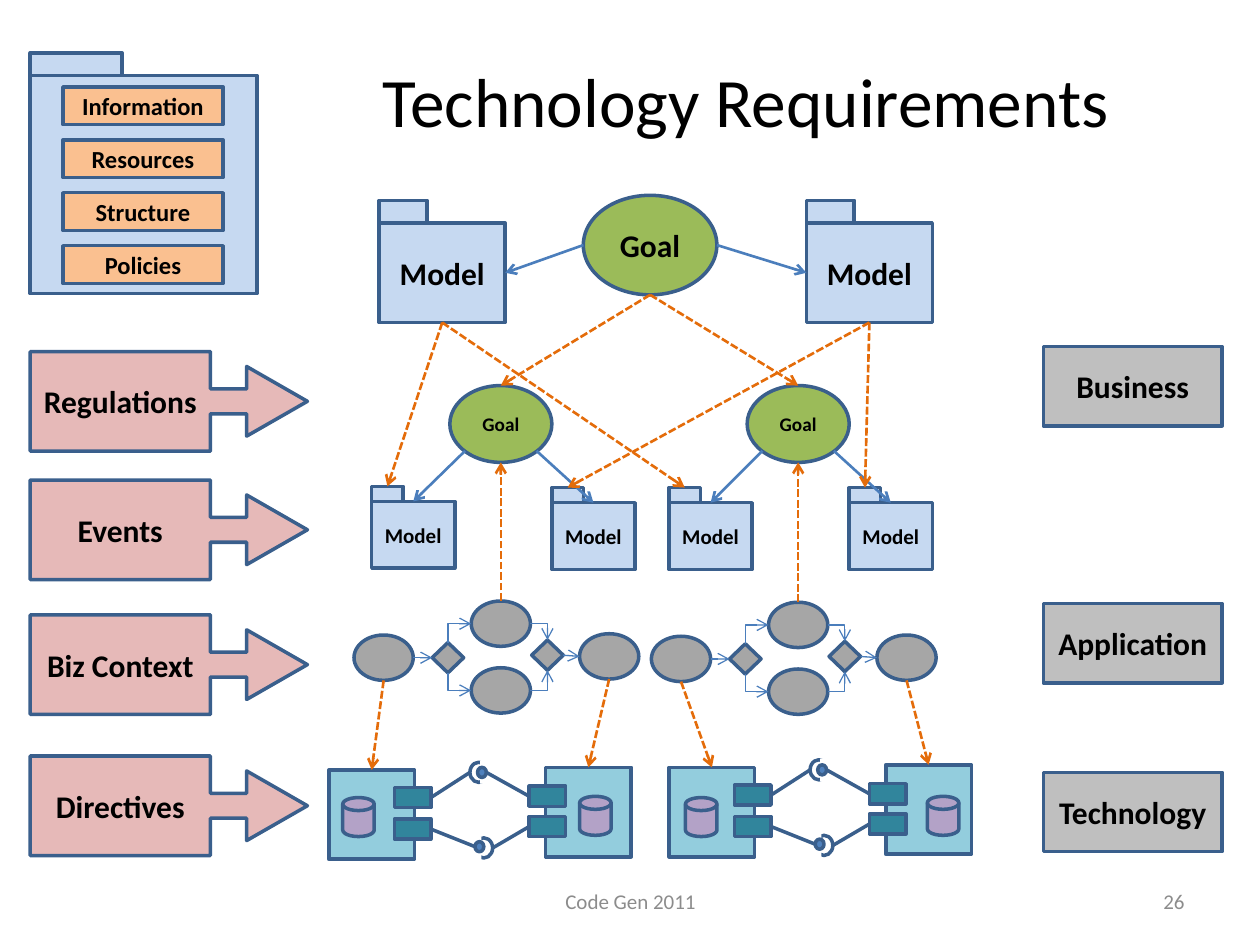
from lxml import etree
from pptx import Presentation
from pptx import util as u
from pptx.dml.color import RGBColor
from pptx.enum import dml, shapes, text
from pptx.oxml.ns import qn

THEME = {
    "font": "Calibri", "ink": "000000", "muted": "8C8C8C", "outline": "3A5F8C",
    "folder": "C6D9F1", "item": "FAC090", "goal": "9BBB59", "input": "E6B9B8",
    "layer": "BFBFBF", "step": "A6A6A6", "component": "93CDDD", "port": "31859C",
    "store": "B3A2C7", "ball": "4F81BD", "paper": "FFFFFF",
    "title": 39.6, "large": 18, "medium": 14, "model": 12, "small": 11, "footer": 12,
}
LINES = {
    "solid": {"color": "4B7EBC", "width": 1.5, "arrow": True},
    "trace": {"color": "E46C0A", "width": 1.5, "arrow": True, "dash": dml.MSO_LINE.SQUARE_DOT},
    "flow": {"color": "4B7EBC", "width": 0.75, "arrow": True},
    "wire": {"color": THEME["outline"], "width": 2, "arrow": False},
}
SITES = {"top": (0.5, 0), "left": (0, 0.5), "bottom": (0.5, 1), "right": (1, 0.5),
         "lower left": (0.15, 0.85), "lower right": (0.85, 0.85)}
JOINS = ["top", "left", "bottom", "right"]
KIND = shapes.MSO_SHAPE
ALIGN = text.PP_ALIGN

CAPTIONS = [
    ("Technology Requirements", (2.61, 0.17, 6.29, 1.25), "title", "ink", ALIGN.RIGHT),
    ("26", (7.17, 6.95, 2.33, 0.4), "footer", "muted", ALIGN.RIGHT),
    ("Code Gen 2011", (3.42, 6.95, 3.17, 0.4), "footer", "muted", ALIGN.CENTER),
]
INPUTS = [("Regulations", 2.79), ("Events", 3.81), ("Biz Context", 4.88), ("Directives", 6)]
ITEMS = ["Information", "Resources", "Structure", "Policies"]
LAYERS = [("Business", 2.75), ("Application", 4.79), ("Technology", 6.13)]
TOP_MODELS = [3.01, 6.4]
SUB_GOALS = [3.57, 5.93]
SUB_MODELS = [(2.95, 3.86), (4.38, 3.87), (5.31, 3.87), (6.74, 3.87)]
STORES = [(2.72, 6.33), (4.6, 6.32), (5.44, 6.33), (7.36, 6.32)]

STEP, GATE = (0.47, 0.36), (0.25, 0.24)
FLOW_OFFSETS = [(0, 0), (2.36, 0.01)]
FLOW = {
    "start": (KIND.OVAL, 2.81, 5.04, STEP),
    "split": (KIND.FLOWCHART_DECISION, 3.43, 5.1, GATE),
    "lower": (KIND.OVAL, 3.74, 5.3, STEP),
    "upper": (KIND.OVAL, 3.74, 4.77, STEP),
    "finish": (KIND.OVAL, 4.6, 5.03, STEP),
    "merge": (KIND.FLOWCHART_DECISION, 4.22, 5.08, GATE),
}
FLOW_LINKS = [
    ("start", "right", "split", "left", {}),
    ("upper", "left", "split", "top", {"elbow": True, "arrow_end": "headEnd"}),
    ("lower", "left", "split", "bottom", {"elbow": True, "arrow_end": "headEnd"}),
    ("upper", "right", "merge", "top", {"elbow": True}),
    ("lower", "right", "merge", "bottom", {"elbow": True}),
    ("merge", "right", "finish", "left", {}),
]

BOX, PORT, SOCKET, COVER, BALL = (0.68, 0.71), (0.29, 0.16), (0.14, 0.16), (0.15, 0.18), (0.07, 0.08)
ASSEMBLY_OFFSETS = [(0, 0), (2.7, -0.02)]
ASSEMBLY = {
    "left box": (KIND.RECTANGLE, 2.61, 6.11, BOX, "component"),
    "left upper port": (KIND.RECTANGLE, 3.13, 6.25, PORT, "port"),
    "left lower port": (KIND.RECTANGLE, 3.13, 6.5, PORT, "port"),
    "right box": (KIND.RECTANGLE, 4.33, 6.09, BOX, "component"),
    "right upper port": (KIND.RECTANGLE, 4.2, 6.24, PORT, "port"),
    "right lower port": (KIND.RECTANGLE, 4.2, 6.48, PORT, "port"),
    "upper socket": (KIND.OVAL, 3.73, 6.05, SOCKET, None),
    "upper cover": (KIND.RECTANGLE, 3.81, 6.04, COVER, "paper"),
    "lower socket": (KIND.OVAL, 3.77, 6.65, SOCKET, None),
    "lower cover": (KIND.RECTANGLE, 3.67, 6.64, COVER, "paper"),
    "upper ball": (KIND.OVAL, 3.79, 6.09, BALL, "ball"),
    "lower ball": (KIND.OVAL, 3.77, 6.68, BALL, "ball"),
}
WIRES = [
    ("left upper port", "right", "upper socket", "left"),
    ("right lower port", "left", "lower socket", "right"),
    ("right upper port", "left", "upper ball", "right"),
    ("left lower port", "right", "lower ball", "left"),
]


def cm(*inches):
    return [u.Cm(value * 2.54) for value in inches]


def write(shape, words, size, color="ink", align=ALIGN.CENTER, margin=0):
    frame = shape.text_frame
    side = u.Cm(margin)
    for key, value in {"word_wrap": True, "vertical_anchor": text.MSO_ANCHOR.MIDDLE,
                       "margin_left": side, "margin_right": side,
                       "margin_top": 0, "margin_bottom": 0}.items():
        setattr(frame, key, value)
    paragraph = frame.paragraphs[0]
    paragraph.alignment = align
    run = paragraph.add_run()
    run.text = words
    for key, value in {"name": THEME["font"], "size": u.Pt(THEME[size]),
                       "bold": margin == 0}.items():
        setattr(run.font, key, value)
    run.font.color.rgb = RGBColor.from_string(THEME[color])


def block(canvas, kind, at, fill, words=None, size="large"):
    shape = canvas.add_shape(kind, *cm(*at))
    shape.shadow.inherit = False
    if fill:
        shape.fill.solid()
        shape.fill.fore_color.rgb = RGBColor.from_string(THEME[fill])
    else:
        shape.fill.background()
    if fill == "paper":
        shape.line.fill.background()
    else:
        shape.line.color.rgb = RGBColor.from_string(THEME["outline"])
        shape.line.width = u.Pt(2)
    if words:
        write(shape, words, size)
    return shape


def link(canvas, source, source_site, target, target_site, style, elbow=False, arrow_end="tailEnd"):
    ends = [(source, source_site), (target, target_site)]
    points = [int(value) for shape, site in ends
              for value in (shape.left + shape.width * SITES[site][0],
                            shape.top + shape.height * SITES[site][1])]
    route = shapes.MSO_CONNECTOR.ELBOW if elbow else shapes.MSO_CONNECTOR.STRAIGHT
    connector = canvas.add_connector(route, *points)
    properties = connector._element.spPr
    if elbow:
        properties.find(qn("a:prstGeom")).set("prst", "bentConnector2")
    else:
        for (shape, site), join in zip(ends, (connector.begin_connect, connector.end_connect)):
            if shape.auto_shape_type == KIND.RECTANGLE and site in JOINS:
                join(shape, JOINS.index(site))
    look = LINES[style]
    connector.line.color.rgb = RGBColor.from_string(look["color"])
    connector.line.width = u.Pt(look["width"])
    if "dash" in look:
        connector.line.dash_style = look["dash"]
    if look["arrow"]:
        etree.SubElement(properties.find(qn("a:ln")), qn("a:" + arrow_end), type="arrow")
    etree.SubElement(properties, qn("a:effectLst"))


def folder(canvas, x, y, body_size, tab_size, words=None, size="large"):
    body = block(canvas, KIND.RECTANGLE, (x, y + tab_size[1], *body_size), "folder", words, size)
    return body, block(canvas, KIND.RECTANGLE, (x, y, *tab_size), "folder")


def group(page):
    return page.add_group_shape().shapes


def main():
    deck = Presentation()
    deck.slide_width, deck.slide_height = cm(10, 7.5)
    page = deck.slides.add_slide(deck.slide_layouts[6]).shapes

    for words, at, size, color, align in CAPTIONS:
        write(page.add_textbox(*cm(*at)), words, size, color, align, margin=0.25)
    for words, y in INPUTS:
        callout = block(page, KIND.RIGHT_ARROW_CALLOUT, (0.24, y, 2.2, 0.79), "input", words)
        for index, value in enumerate((0.25, 0.35, 0.61, 0.65)):
            callout.adjustments[index] = value
    for words, y in LAYERS:
        block(page, KIND.RECTANGLE, (8.28, y, 1.42, 0.63), "layer", words)

    package = group(page)
    folder(package, 0.24, 0.42, (1.8, 1.73), (0.73, 0.18))
    for row, words in enumerate(ITEMS):
        block(package, KIND.RECTANGLE, (0.5, 0.69 + row * 0.42, 1.27, 0.3), "item", words, "medium")

    goal = block(page, KIND.OVAL, (4.63, 1.55, 1.06, 0.79), "goal", "Goal")
    models = [folder(group(page), x, 1.59, (1, 0.79), (0.38, 0.18), "Model")[0] for x in TOP_MODELS]
    sub_goals = [block(page, KIND.OVAL, (x, 3.06, 0.81, 0.61), "goal", "Goal", "small")
                 for x in SUB_GOALS]
    sub_models = [folder(group(page), x, y, (0.66, 0.53), (0.25, 0.12), "Model", "model")
                  for x, y in SUB_MODELS]

    for model, near, far in zip(models, ("left", "right"), ("right", "left")):
        link(page, goal, near, model, far, "solid")
    for index, sub_goal in enumerate(sub_goals):
        link(page, goal, "bottom", sub_goal, "top", "trace")
        for site, (body, _) in zip(("lower left", "lower right"), sub_models[index * 2:]):
            link(page, sub_goal, site, body, "top", "solid")
    for index, model in enumerate(models):
        for _, tab in sub_models[index::2]:
            link(page, model, "bottom", tab, "top", "trace")

    for sub_goal, (fx, fy), (ax, ay) in zip(sub_goals, FLOW_OFFSETS, ASSEMBLY_OFFSETS):
        process = group(page)
        steps = {key: block(process, kind, (x + fx, y + fy, *size), "step")
                 for key, (kind, x, y, size) in FLOW.items()}
        for source, source_site, target, target_site, options in FLOW_LINKS:
            link(process, steps[source], source_site, steps[target], target_site, "flow", **options)
        link(page, steps["upper"], "top", sub_goal, "bottom", "trace")

        system = group(page)
        parts = {key: block(system, kind, (x + ax, y + ay, *size), fill)
                 for key, (kind, x, y, size, fill) in ASSEMBLY.items()}
        for source, source_site, target, target_site in WIRES:
            link(system, parts[source], source_site, parts[target], target_site, "wire")
        for step, box in (("start", "left box"), ("finish", "right box")):
            link(page, steps[step], "bottom", parts[box], "top", "trace")

    for x, y in STORES:
        block(page, KIND.FLOWCHART_MAGNETIC_DISK, (x, y, 0.25, 0.31), "store")

    deck.save("out.pptx")


if __name__ == "__main__":
    main()
